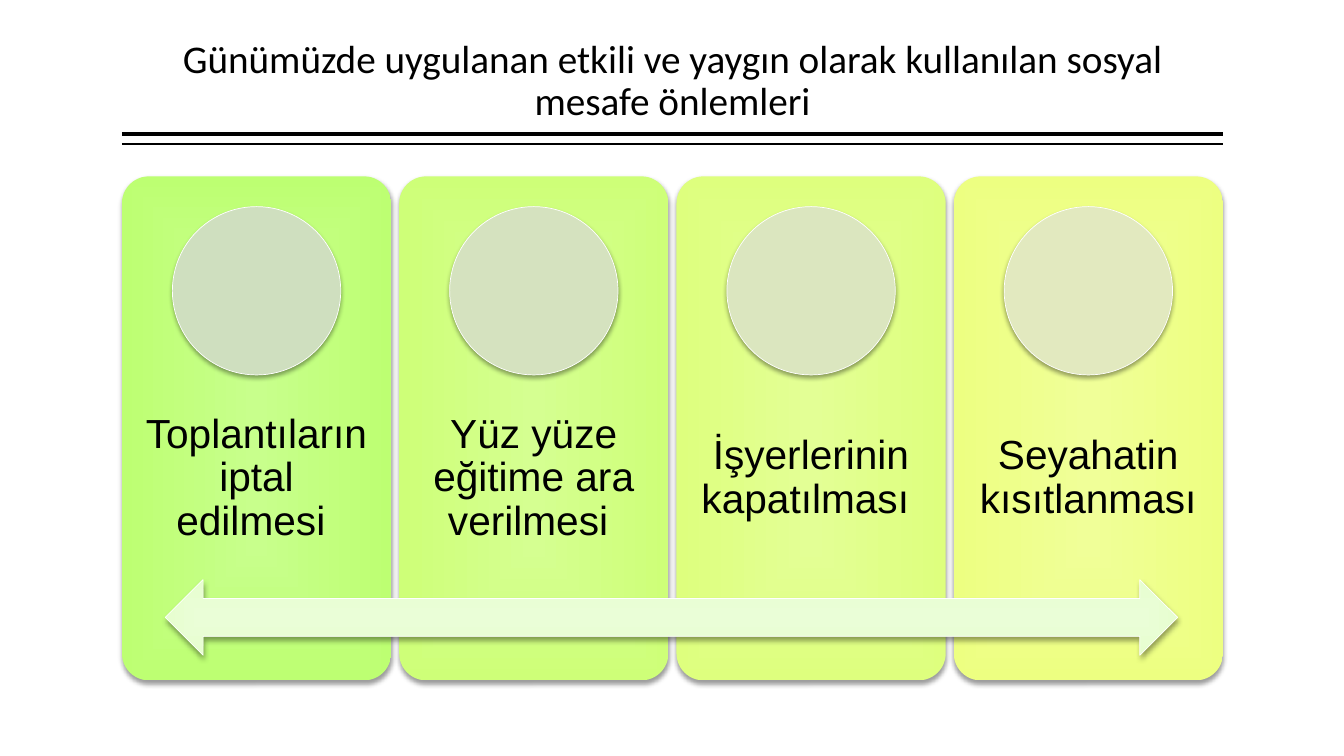
from pptx import Presentation
from pptx.dml.color import RGBColor
from pptx.enum import shapes, text
from pptx.oxml import parse_xml
from pptx.oxml.ns import nsdecls, qn
from pptx.util import Inches, Pt

LEFT, WIDTH = 1.21, 10.92
CARD_WIDTH, CARD_PITCH = 2.67, 2.75
CIRCLE_SIZE = 1.67
CARDS = [
    ("Toplantıların iptal edilmesi ", "C8FF8C", "BDFF72", "CFDFBF"),
    ("Yüz yüze eğitime ara verilmesi ", "D5FF91", "CEFF78", "D5E2BF"),
    ("İşyerlerinin kapatılması ", "E3FF95", "DEFF7E", "DBE6BF"),
    ("Seyahatin kısıtlanması", "F0FF98", "EDFF81", "E2E9BF"),
]


def color(value):
    """Return the colour for a hex string."""
    return RGBColor.from_string(value)


def add_shadow(shape):
    """Give a shape a soft shadow falling straight down."""
    shape.shadow.inherit = False
    effects = shape._element.spPr.find(qn("a:effectLst"))
    effects.append(parse_xml(
        f'<a:outerShdw {nsdecls("a")} blurRad="{Pt(3.5)}" dist="{Pt(2)}" dir="5400000" '
        'rotWithShape="0"><a:srgbClr val="000000"><a:alpha val="38000"/></a:srgbClr>'
        '</a:outerShdw>'))


def fill_from_center(shape, inner, outer):
    """Fill a shape with a gradient that spreads from its centre."""
    shape.fill.gradient()
    for stop, value in zip(shape.fill.gradient_stops, (inner, outer)):
        stop.color.rgb = color(value)
    gradient = shape._element.spPr.find(qn("a:gradFill"))
    gradient.remove(gradient.find(qn("a:lin")))
    gradient.append(parse_xml(
        f'<a:path {nsdecls("a")} path="rect">'
        '<a:fillToRect l="50000" t="50000" r="50000" b="50000"/></a:path>'))


def add_shape(slide, kind, left, top, width, height, colors, outlined=True):
    """Add a shadowed shape filled with one colour or a gradient of two."""
    shape = slide.shapes.add_shape(
        kind, Inches(left), Inches(top), Inches(width), Inches(height))
    if len(colors) == 2:
        fill_from_center(shape, *colors)
    else:
        shape.fill.solid()
        shape.fill.fore_color.rgb = color(colors[0])
    if outlined:
        shape.line.color.rgb = color("FFFFFF")
        shape.line.width = Pt(0.5)
    else:
        shape.line.fill.background()
    add_shadow(shape)
    return shape


def add_text(slide, words, box, font, size, anchor, insets, space_after=0):
    """Add a centred, wrapping text box."""
    frame = slide.shapes.add_textbox(*map(Inches, box)).text_frame
    frame.word_wrap = True
    frame.vertical_anchor = anchor
    frame.margin_left = frame.margin_right = Inches(insets[0])
    frame.margin_top = frame.margin_bottom = Inches(insets[1])
    frame.text = words
    paragraph = frame.paragraphs[0]
    paragraph.alignment = text.PP_ALIGN.CENTER
    paragraph.line_spacing = 0.9
    paragraph.space_after = Pt(space_after)
    run_font = paragraph.runs[0].font
    run_font.name = font
    run_font.size = Pt(size)
    run_font.color.rgb = color("000000")


def add_rule(slide, top, weight):
    """Add a horizontal black rule under the title."""
    rule = slide.shapes.add_connector(
        shapes.MSO_CONNECTOR.STRAIGHT,
        Inches(LEFT), Inches(top), Inches(LEFT + WIDTH), Inches(top))
    rule.line.color.rgb = color("000000")
    rule.line.width = Pt(weight)
    rule._element.spPr.append(parse_xml(f'<a:effectLst {nsdecls("a")}/>'))


def add_card(slide, left, words, inner, outer, circle_color):
    """Add a rounded card with a circle above its text."""
    kinds = shapes.MSO_SHAPE
    card = add_shape(slide, kinds.ROUNDED_RECTANGLE, left, 1.75, CARD_WIDTH, 5,
                     (inner, outer), outlined=False)
    card.adjustments[0] = 0.1
    add_text(slide, words, (left, 3.75, CARD_WIDTH, 2), "Arial", 29,
             text.MSO_ANCHOR.MIDDLE, (0.23, 0.23), space_after=10)
    add_shape(slide, kinds.OVAL, left + (CARD_WIDTH - CIRCLE_SIZE) / 2, 2.05,
              CIRCLE_SIZE, CIRCLE_SIZE, (circle_color,))


def main():
    """Build the slide and save it."""
    presentation = Presentation()
    presentation.slide_width = Inches(13.33)
    presentation.slide_height = Inches(7.5)
    slide = presentation.slides.add_slide(presentation.slide_layouts[6])
    add_rule(slide, 1.33, 3)
    add_rule(slide, 1.43, 1)
    add_text(slide, "Günümüzde uygulanan etkili ve yaygın olarak kullanılan sosyal "
             "mesafe önlemleri", (LEFT, 0.08, WIDTH, 1.2), "Calibri", 28,
             text.MSO_ANCHOR.BOTTOM, (0, 0.05))
    for index, card in enumerate(CARDS):
        add_card(slide, LEFT + index * CARD_PITCH, *card)
    add_shape(slide, shapes.MSO_SHAPE.LEFT_RIGHT_ARROW, 1.64, 5.75, 10.04, 0.75,
              ("EAFED7", "E7FED0"))
    presentation.save("out.pptx")


if __name__ == "__main__":
    main()
